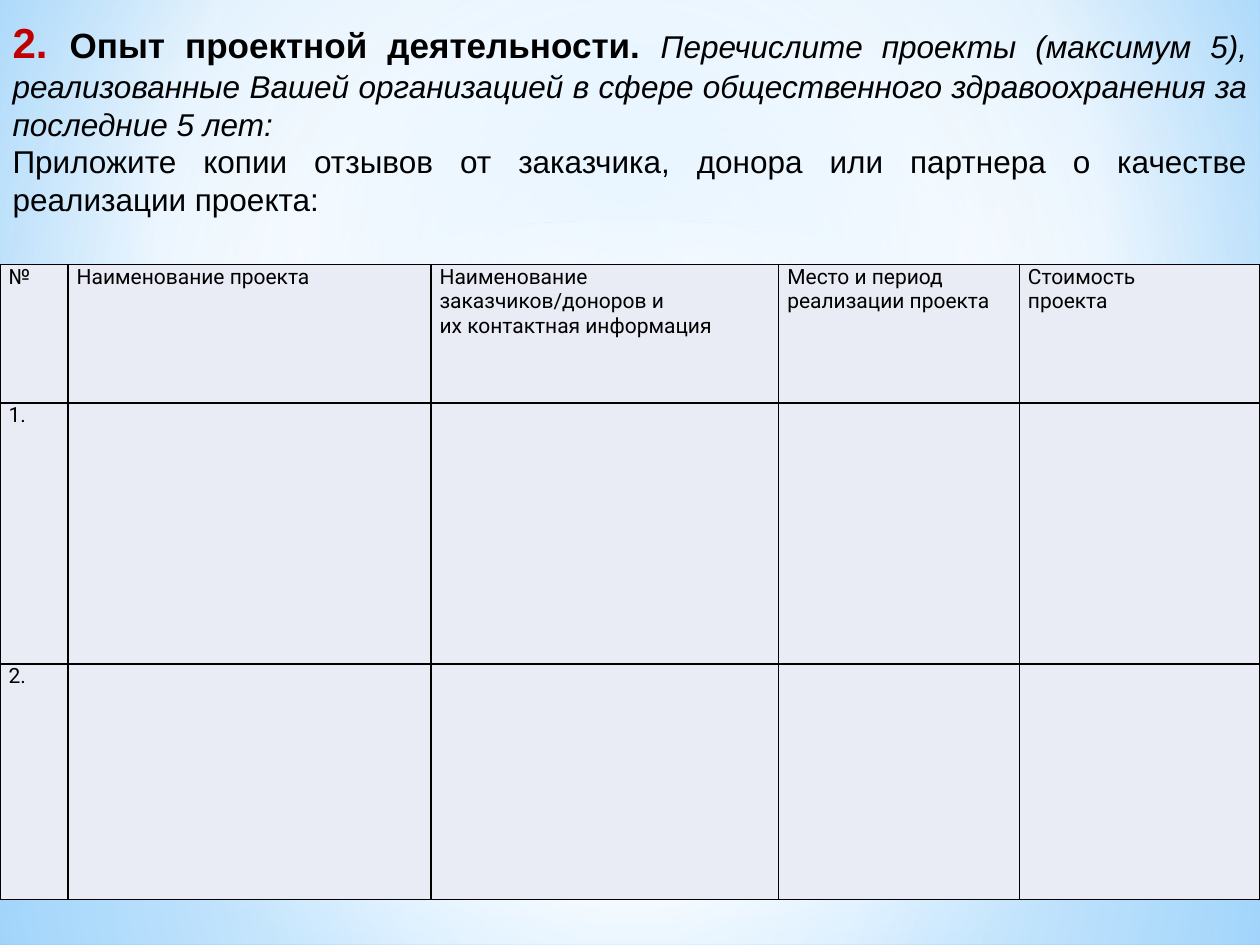
from copy import deepcopy

from lxml.etree import SubElement
from pptx import Presentation
from pptx.dml.color import RGBColor
from pptx.enum.shapes import MSO_SHAPE as Shape
from pptx.enum.text import MSO_ANCHOR as Anchor, MSO_AUTO_SIZE as AutoSize, PP_ALIGN as Align
from pptx.oxml.ns import qn
from pptx.util import Pt

WIDTH, HEIGHT = 720, 540
BLACK, RED, CELL_FILL = "000000", "C00000", "E9EBF5"
WHITE, SKY = "FFFFFF", "B4DCFA"

HEADING = [
    [
        ("2. ", dict(size=24, color=RED, bold=True)),
        ("Опыт проектной деятельности. ", dict(size=20, bold=True)),
        ("Перечислите проекты (максимум 5), реализованные Вашей организацией "
         "в сфере общественного здравоохранения за последние 5 лет:",
         dict(size=18, italic=True)),
    ],
    [("Приложите копии отзывов от заказчика, донора или партнера "
      "о качестве реализации проекта: ", dict(size=18))],
]

ROWS = [
    ["№", "Наименование проекта",
     "Наименование \nзаказчиков/доноров и \nих контактная информация",
     "Место и период\nреализации проекта", "Стоимость \nпроекта"],
    ["1.", "", "", "", ""],
    ["2.", "", "", "", ""],
]
COLUMN_WIDTHS = [38.88, 207.36, 198.72, 137.52, 137.52]
ROW_HEIGHTS = [79.2, 149.04, 134.64]
TABLE_TOP = 151.2

# Gradient stops are (position, colour, opacity), all but colour in percent.
CENTER = (50, 50, 50, 50)
BACKDROP = [(0, "9ED5FF", 100), (60, WHITE, 100), (100, "5BB9FF", 100)]
GLOWS = [  # shape, top, height, stops, focus (None: top to bottom)
    (Shape.RECTANGLE, 401.76, 138.24,
     [(0, WHITE, 91), (37, WHITE, 76), (100, SKY, 79)], CENTER),
    (Shape.RECTANGLE, 0, 401.76,
     [(0, WHITE, 89), (48, WHITE, 62), (100, SKY, 79)], CENTER),
    (Shape.RECTANGLE, 296.64, 180,
     [(0, WHITE, 0), (29, WHITE, 30), (45, SKY, 40),
      (55, WHITE, 26), (65, SKY, 60), (100, WHITE, 0)], None),
    (Shape.OVAL, 126, 401.76, [(0, WHITE, 100), (56, WHITE, 0)], CENTER),
]


def rgb(color):
    return RGBColor.from_string(color)


def percent(value):
    return str(value * 1000)


def add_span(para, text, size=12, color=BLACK, font="Arial", bold=False, italic=False):
    span = para.add_run()
    span.text = text
    span.font.size, span.font.name = Pt(size), font
    span.font.bold, span.font.italic = bold, italic
    span.font.color.rgb = rgb(color)
    return span


def paint_gradient(owner, stops, focus):
    """Give a shape or background a gradient, radial around focus or else vertical."""
    owner.fill.gradient()
    gradient = next(owner.element.iter(qn("a:gradFill")))
    for child in list(gradient):
        gradient.remove(child)
    stop_list = SubElement(gradient, qn("a:gsLst"))
    for position, color, opacity in stops:
        stop = SubElement(stop_list, qn("a:gs"), pos=percent(position))
        tint = SubElement(stop, qn("a:srgbClr"), val=color)
        if opacity < 100:
            SubElement(tint, qn("a:alpha"), val=percent(opacity))
    if focus:
        radial = SubElement(gradient, qn("a:path"), path="circle")
        sides = dict(zip("ltrb", map(percent, focus)))
        SubElement(radial, qn("a:fillToRect"), **sides)
    else:
        SubElement(gradient, qn("a:lin"), ang="5400000", scaled="0")


def paint_backdrop(page):
    background = page.background
    background.fill.gradient()
    holder = Backdrop(background.fill, page.element)
    paint_gradient(holder, BACKDROP, (20, 10, 20, 60))


class Backdrop:
    """Pairs the page's fill with its XML, as a shape does."""

    def __init__(self, fill, element):
        self.fill, self.element = fill, element


def add_glows(page):
    for kind, top, height, stops, focus in GLOWS:
        glow = page.shapes.add_shape(kind, 0, Pt(top), Pt(WIDTH), Pt(height))
        glow.shadow.inherit = False
        glow.line.fill.background()
        paint_gradient(glow, stops, focus)


def fill_heading(title):
    title.left, title.top, title.width, title.height = 0, Pt(5), Pt(WIDTH), Pt(124)
    frame = title.text_frame
    frame.word_wrap = True
    frame.auto_size = AutoSize.SHAPE_TO_FIT_TEXT
    frame.vertical_anchor = Anchor.MIDDLE
    for index, spans in enumerate(HEADING):
        para = frame.add_paragraph() if index else frame.paragraphs[0]
        para.alignment = Align.JUSTIFY
        for text, style in spans:
            add_span(para, text, **style)


def draw_borders(cell):
    properties = cell._tc.get_or_add_tcPr()
    for place, side in enumerate(("a:lnL", "a:lnR", "a:lnT", "a:lnB")):
        line = properties.makeelement(qn(side), {"w": str(Pt(1))})
        fill = SubElement(line, qn("a:solidFill"))
        SubElement(fill, qn("a:srgbClr"), val=BLACK)
        properties.insert(place, line)


def fill_cell(cell, text):
    cell.margin_left = cell.margin_right = Pt(5)
    cell.margin_top = cell.margin_bottom = 0
    cell.fill.solid()
    cell.fill.fore_color.rgb = rgb(CELL_FILL)
    draw_borders(cell)
    para = cell.text_frame.paragraphs[0]
    for index, line in enumerate(text.split("\n") if text else []):
        if index:
            para.add_line_break()
        span = add_span(para, line, font="Roboto")
        for line_break in para._p.findall(qn("a:br")):
            if len(line_break) == 0:
                line_break.append(deepcopy(span.font._element))


def add_projects_table(page):
    table = page.shapes.add_table(
        len(ROWS), len(COLUMN_WIDTHS), 0, Pt(TABLE_TOP),
        Pt(WIDTH), Pt(sum(ROW_HEIGHTS))).table
    for column, width in zip(table.columns, COLUMN_WIDTHS):
        column.width = Pt(width)
    for row, height, texts in zip(table.rows, ROW_HEIGHTS, ROWS):
        row.height = Pt(height)
        for cell, text in zip(row.cells, texts):
            fill_cell(cell, text)


def main():
    deck = Presentation()
    deck.slide_width, deck.slide_height = Pt(WIDTH), Pt(HEIGHT)
    page = deck.slides.add_slide(deck.slide_layouts[5])
    paint_backdrop(page)
    add_glows(page)
    add_projects_table(page)
    title = page.shapes.title
    fill_heading(title)
    page.shapes.element.append(title.element)  # bring the heading to the front
    deck.save("out.pptx")


if __name__ == "__main__":
    main()
